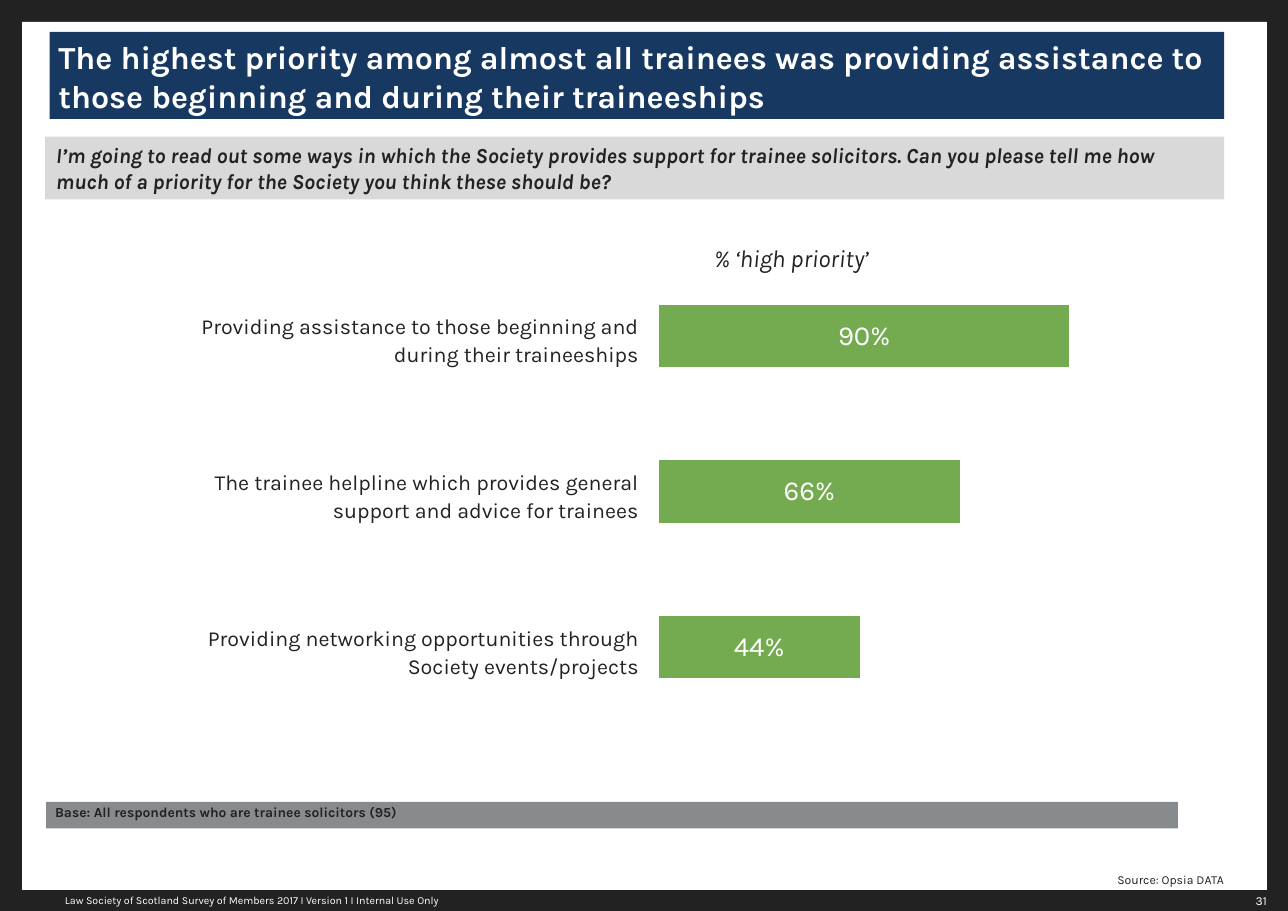
from dataclasses import dataclass

from lxml.etree import SubElement
from pptx import Presentation
from pptx.chart.data import CategoryChartData as ChartData
from pptx.dml.color import RGBColor as Color
from pptx.enum.chart import XL_CHART_TYPE as ChartType, XL_LABEL_POSITION as LabelPosition
from pptx.enum.shapes import MSO_SHAPE as Preset
from pptx.enum.text import MSO_ANCHOR as Anchor, MSO_AUTO_SIZE as AutoSize, PP_ALIGN as Align
from pptx.oxml.ns import qn
from pptx.util import Inches, Pt


@dataclass(frozen=True)
class Theme:
    """Colours, type sizes and font of the slide."""
    font: str = "Karla"
    ink: str = "222223"
    paper: str = "FFFFFF"
    navy: str = "173861"
    mist: str = "D9D9D9"
    slate: str = "888B8D"
    green: str = "74AA50"
    title: int = 21
    value: int = 18
    heading: int = 16
    body: int = 14
    base: int = 9
    small: int = 8
    footer: int = 7


THEME = Theme()
PRIORITIES = [
    ("Providing assistance to those beginning and during their traineeships", 0.90),
    ("The trainee helpline which provides general support and advice for trainees", 0.66),
    ("Providing networking opportunities through Society events/projects", 0.44),
]


@dataclass(frozen=True)
class Box:
    """A rectangle in slide units."""
    left: int
    top: int
    width: int
    height: int

    def region(self, left, top, width, height):
        """Return an inner box given in percent of this one."""
        return Box(int(self.left + self.width * left / 100), int(self.top + self.height * top / 100),
                   int(self.width * width / 100), int(self.height * height / 100))

    def edges(self):
        """Return left, top, width and height in order."""
        return self.left, self.top, self.width, self.height


def apply(target, values):
    """Set each named attribute on the target."""
    for name, value in values.items():
        setattr(target, name, value)


def set_font(font, size, color=THEME.ink, bold=False, italic=False):
    """Give a font the slide's typeface and the chosen look."""
    apply(font, {"name": THEME.font, "size": Pt(size), "bold": bold, "italic": italic})
    font.color.rgb = Color.from_string(color)


def paint(shape, color):
    """Fill a shape with one colour and no outline."""
    shape.fill.solid()
    shape.fill.fore_color.rgb = Color.from_string(color)
    shape.line.fill.background()


def write(shape, text, size, inset=(0, 0), align=Align.LEFT, anchor=Anchor.TOP,
          spacing=1.0, wrap=True, **look):
    """Put one formatted paragraph in a shape."""
    across, down = map(Inches, inset)
    frame = shape.text_frame
    apply(frame, {"margin_left": across, "margin_right": across, "margin_top": down,
                  "margin_bottom": down, "word_wrap": wrap, "auto_size": AutoSize.NONE,
                  "vertical_anchor": anchor})
    para = frame.paragraphs[0]
    apply(para, {"alignment": align, "line_spacing": spacing})
    span = para.add_run()
    span.text = text
    set_font(span.font, size, **look)


def add_text(page, box, text, size, **style):
    """Add a text box."""
    write(page.shapes.add_textbox(*box.edges()), text, size, **style)


def add_panel(page, box, color):
    """Add a plain filled rectangle."""
    panel = page.shapes.add_shape(Preset.RECTANGLE, *box.edges())
    panel.shadow.inherit = False
    paint(panel, color)
    return panel


def add_frame(page, box):
    """Draw the white sheet on a dark ground, with footer and page number."""
    page.background.fill.solid()
    page.background.fill.fore_color.rgb = Color.from_string(THEME.ink)
    sheet = add_panel(page, box.region(1.71, 2.42, 96.66, 95.28), THEME.paper)
    page.shapes.title._element.addprevious(sheet._element)
    add_text(page, box.region(93.67, 97.46, 5.39, 2.78), "31", THEME.small, inset=(0.08, 0.04),
             align=Align.RIGHT, spacing=1.1, color=THEME.paper)
    add_text(page, box.region(5.05, 97.58, 45.77, 2.42),
             "Law Society of Scotland Survey of Members 2017 I Version 1 I Internal Use Only",
             THEME.footer, anchor=Anchor.MIDDLE, wrap=False, color=THEME.paper)


def add_title(page, box):
    """Place the title on its navy band."""
    title = page.shapes.title
    apply(title, dict(zip(("left", "top", "width", "height"), box.edges())))
    paint(title, THEME.navy)
    write(title, "The highest priority among almost all trainees was providing assistance to "
          "those beginning and during their traineeships", THEME.title, inset=(0.08, 0.04),
          anchor=Anchor.BOTTOM, color=THEME.paper, bold=True)


def add_question(page, box):
    """Place the survey question on its pale band."""
    write(add_panel(page, box, THEME.mist),
          "I’m going to read out some ways in which the Society provides support for trainee "
          "solicitors. Can you please tell me how much of a priority for the Society you think "
          "these should be?", THEME.body, inset=(0.1, 0.05), bold=True, italic=True)


def set_plot_area(chart, shares):
    """Fix the inner plot area as shares of the chart."""
    area = chart._chartSpace.chart.plotArea
    for old in area.findall(qn("c:layout")):
        area.remove(old)
    layout = SubElement(area, qn("c:layout"))
    area.insert(0, layout)
    manual = SubElement(layout, qn("c:manualLayout"))
    settings = {"layoutTarget": "inner", "xMode": "edge", "yMode": "edge", **shares}
    for name, value in settings.items():
        SubElement(manual, qn(f"c:{name}")).set("val", str(value))


def add_bars(page, box):
    """Draw the priority bars."""
    data = ChartData(number_format="0%")
    data.categories = ["1", "2", "3"]
    data.add_series("Series 1", [share for _, share in reversed(PRIORITIES)])
    chart = page.shapes.add_chart(ChartType.BAR_CLUSTERED, *box.edges(), data).chart
    apply(chart, {"has_legend": False, "has_title": False})
    set_font(chart.font, THEME.value)
    apply(chart.category_axis, {"visible": False})
    apply(chart.value_axis, {"visible": False, "has_major_gridlines": False,
                             "minimum_scale": 0, "maximum_scale": 1})
    plot = chart.plots[0]
    apply(plot, {"gap_width": 150, "vary_by_categories": False, "has_data_labels": True})
    paint(plot.series[0].format, THEME.green)
    apply(plot.data_labels, {"show_value": True, "position": LabelPosition.CENTER,
                             "number_format": "0%", "number_format_is_linked": False})
    set_font(plot.data_labels.font, THEME.value, THEME.paper)
    set_plot_area(chart, {"x": 0.535, "y": 0.058, "w": 0.402, "h": 0.936})


def add_priorities(page, box):
    """Place the bars with their heading and row labels."""
    add_bars(page, box)
    for row, (label, _) in enumerate(PRIORITIES):
        add_text(page, box.region(9.03, 16.34 + 31.2 * row, 42.72, 11.48), label, THEME.body,
                 align=Align.RIGHT, spacing=1.1)
    add_text(page, box.region(58.35, 2.21, 20.68, 6.62), "% ‘high priority’", THEME.heading,
             spacing=1.1, italic=True)


def add_notes_band(page, box):
    """Place the base band and the source line beneath it."""
    write(add_panel(page, box.region(0, 0, 96.07, 30), THEME.slate),
          "Base: All respondents who are trainee solicitors (95)", THEME.base,
          inset=(0.08, 0), spacing=1.1, bold=True)
    add_text(page, box.region(69.88, 71.3, 30.12, 25), "Source: Opsia DATA", THEME.small,
             align=Align.RIGHT, anchor=Anchor.BOTTOM, spacing=1.1)


def main():
    """Build and save the deck."""
    deck = Presentation()
    apply(deck, {"slide_width": Inches(11.69), "slide_height": Inches(8.27)})
    page = deck.slides.add_slide(deck.slide_layouts[5])
    whole = Box(0, 0, deck.slide_width, deck.slide_height)
    add_frame(page, whole)
    add_title(page, whole.region(3.85, 3.51, 91.19, 9.55))
    add_question(page, whole.region(3.51, 14.99, 91.53, 6.89))
    add_priorities(page, whole.region(4.02, 25.15, 88.11, 54.78))
    add_notes_band(page, whole.region(3.59, 88.03, 91.45, 9.67))
    deck.save("out.pptx")


if __name__ == "__main__":
    main()
